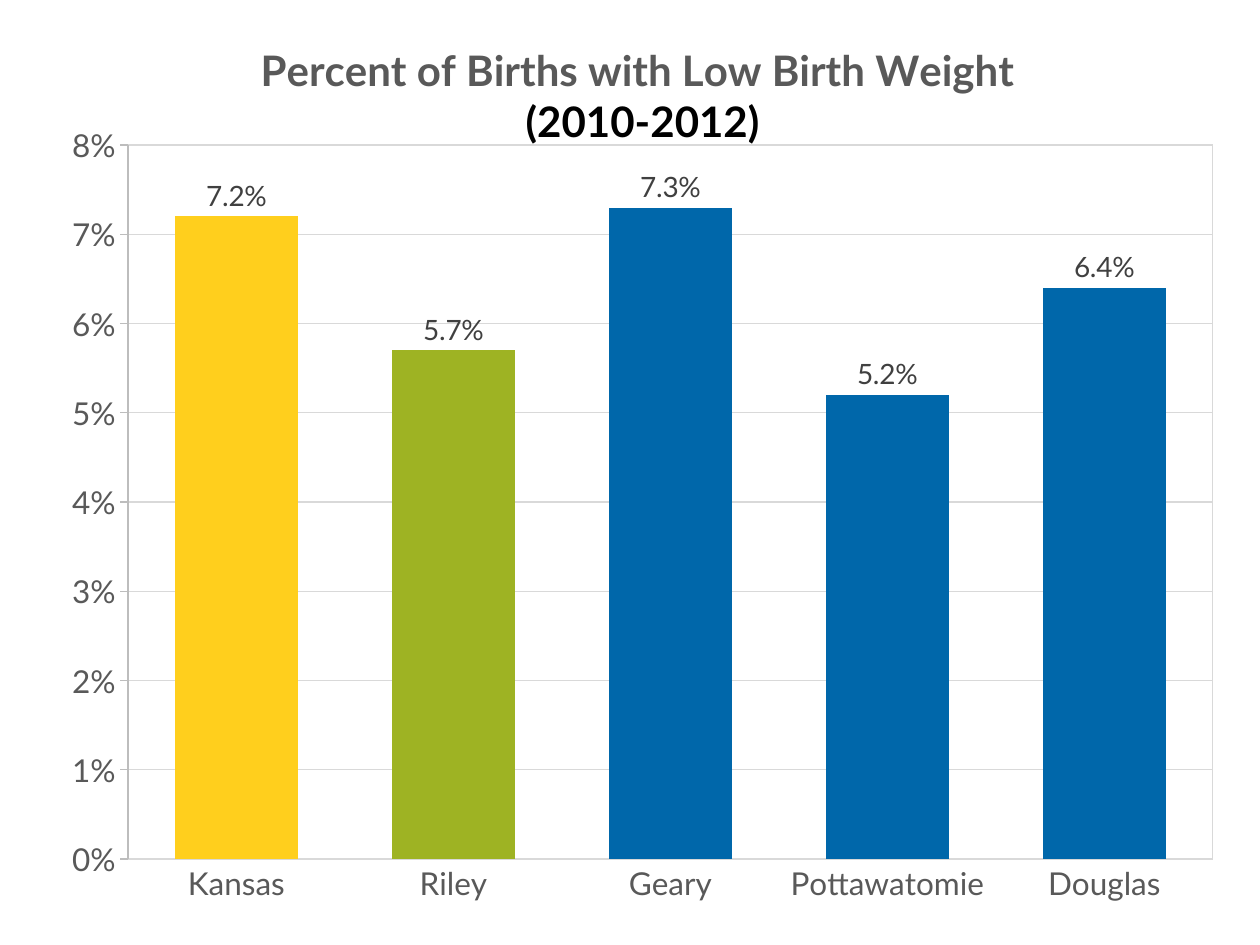
from typing import NamedTuple

from lxml import etree
from pptx import Presentation
from pptx.chart.data import CategoryChartData
from pptx.dml.color import RGBColor
from pptx.enum.chart import XL_CHART_TYPE, XL_LABEL_POSITION, XL_TICK_MARK
from pptx.oxml import parse_xml
from pptx.oxml.ns import nsdecls, qn
from pptx.util import Inches, Pt

COLUMNS = XL_CHART_TYPE.COLUMN_CLUSTERED
OUTSIDE_END = XL_LABEL_POSITION.OUTSIDE_END
TICK_NONE, TICK_OUT = XL_TICK_MARK.NONE, XL_TICK_MARK.OUTSIDE

BLACK = RGBColor(0x00, 0x00, 0x00)
DARK_GRAY = RGBColor(0x40, 0x40, 0x40)
GRAY = RGBColor(0x59, 0x59, 0x59)
AXIS_GRAY = RGBColor(0xBD, 0xBD, 0xBD)
GRID_GRAY = RGBColor(0xD9, 0xD9, 0xD9)
YELLOW = RGBColor(0xFF, 0xCF, 0x1D)
GREEN = RGBColor(0x9E, 0xB3, 0x23)
BLUE = RGBColor(0x00, 0x67, 0xAA)
SERIES_GREEN = RGBColor(0x06, 0x62, 0x43)

FONT = "Lato"
THIN = Pt(0.75)


class Region(NamedTuple):
    region: str
    share: float
    color: RGBColor


class TitleLine(NamedTuple):
    text: str
    color: RGBColor


REGIONS = [
    Region("Kansas", 0.072, YELLOW),
    Region("Riley", 0.057, GREEN),
    Region("Geary", 0.073, BLUE),
    Region("Pottawatomie", 0.052, BLUE),
    Region("Douglas", 0.064, BLUE),
]
TITLE = [
    TitleLine("Percent of Births with Low Birth Weight ", GRAY),
    TitleLine("(2010-2012)", BLACK),
]


def style_font(font, size: int, color: RGBColor, bold: bool = False) -> None:
    font.name = FONT
    font.size = Pt(size)
    font.bold = bold
    font.color.rgb = color


def style_line(line, color: RGBColor) -> None:
    line.width = THIN
    line.color.rgb = color


def style_axis(axis, line_color: RGBColor, tick_mark) -> None:
    style_font(axis.tick_labels.font, 18, GRAY)
    style_line(axis.format.line, line_color)
    axis.major_tick_mark = tick_mark
    axis.minor_tick_mark = TICK_NONE


def place(parent, index: int, **settings) -> None:
    """Give a chart part a manual layout in shares of the chart's size."""
    for old in parent.findall(qn("c:layout")):
        parent.remove(old)
    layout = etree.Element(qn("c:layout"))
    manual = etree.SubElement(layout, qn("c:manualLayout"))
    for tag, value in settings.items():
        etree.SubElement(manual, qn(f"c:{tag}")).set("val", str(value))
    parent.insert(index, layout)


def add_title(chart) -> None:
    title = chart.chart_title
    frame = title.text_frame
    frame.text = "\n".join(line.text for line in TITLE)
    for paragraph, line in zip(frame.paragraphs, TITLE):
        style_font(paragraph.runs[0].font, 24, line.color, bold=True)
    title.include_in_layout = False
    place(title._element, 1, xMode="edge", yMode="edge", x=0.19, y=0.03)


def add_births_chart(slide, width: int, height: int) -> None:
    data = CategoryChartData(number_format="0.0%")
    data.categories = [item.region for item in REGIONS]
    data.add_series("Series 1", [item.share for item in REGIONS])
    left, top = Inches(0.17), Inches(0.08)
    chart = slide.shapes.add_chart(
        COLUMNS, left, top, width - left, height - 2 * top, data
    ).chart
    chart.has_legend = False
    chart.font.name = "Calibri"
    chart.font.size = Pt(10)
    chart.font.color.rgb = BLACK
    add_title(chart)

    # Axes
    style_axis(chart.category_axis, GRID_GRAY, TICK_NONE)
    percent_axis = chart.value_axis
    style_axis(percent_axis, AXIS_GRAY, TICK_OUT)
    percent_axis.minimum_scale = 0
    percent_axis.maximum_scale = 0.08
    percent_axis.major_unit = 0.01
    percent_axis.tick_labels.number_format = "0%"
    percent_axis.tick_labels.number_format_is_linked = False
    style_line(percent_axis.major_gridlines.format.line, GRID_GRAY)

    # Columns, one colour per region
    plot = chart.plots[0]
    plot.gap_width = 77
    plot.vary_by_categories = False
    births = plot.series[0]
    births.format.fill.solid()
    births.format.fill.fore_color.rgb = SERIES_GREEN
    for index, item in enumerate(REGIONS):
        fill = births.points[index].format.fill
        fill.solid()
        fill.fore_color.rgb = item.color

    # Value labels
    labels = births.data_labels
    labels.show_value = True
    labels.number_format = "0.0%"
    labels.number_format_is_linked = False
    labels.position = OUTSIDE_END
    style_font(labels.font, 16, DARK_GRAY)

    # Plot area position and frame
    plot_area = chart._chartSpace.chart.plotArea
    place(plot_area, 0, layoutTarget="inner", xMode="edge", yMode="edge",
          x=0.086, y=0.146, w=0.876, h=0.772)
    plot_area.append(parse_xml(
        f'<c:spPr {nsdecls("c", "a")}><a:noFill/><a:ln w="{THIN}"><a:solidFill>'
        f'<a:srgbClr val="{GRID_GRAY}"/></a:solidFill></a:ln></c:spPr>'
    ))


def main() -> None:
    deck = Presentation()
    deck.slide_width, deck.slide_height = Inches(10), Inches(7.5)
    slide = deck.slides.add_slide(deck.slide_layouts[6])
    add_births_chart(slide, deck.slide_width, deck.slide_height)
    deck.save("out.pptx")


if __name__ == "__main__":
    main()
